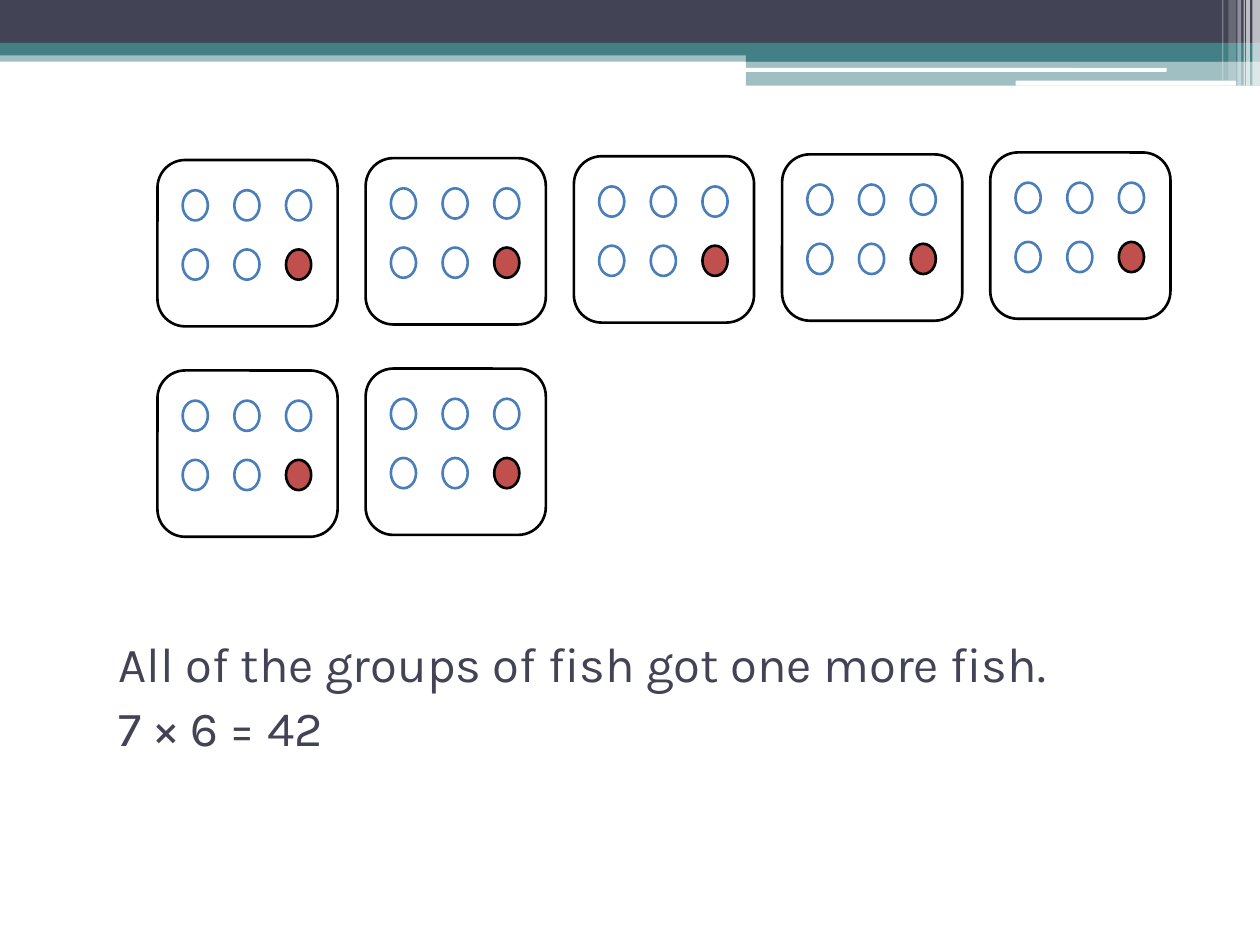
from typing import NamedTuple, Optional

from pptx import Presentation
from pptx.dml.color import RGBColor
from pptx.enum.shapes import MSO_SHAPE as Preset
from pptx.enum.text import MSO_ANCHOR as Anchor, PP_ALIGN as Align
from pptx.oxml.ns import qn
from pptx.oxml.xmlchemy import OxmlElement
from pptx.shapes.autoshape import Shape
from pptx.util import Inches, Pt

SLATE = RGBColor(0x42, 0x44, 0x56)
TEAL = RGBColor(0x43, 0x80, 0x86)
WHITE = RGBColor(0xFF, 0xFF, 0xFF)
BLACK = RGBColor(0x00, 0x00, 0x00)
BLUE = RGBColor(0x4A, 0x7E, 0xBB)
RED = RGBColor(0xC0, 0x50, 0x4D)

TANKS_PER_ROW = (5, 2)
TANK_LEFT, TANK_TOP = 1.25, 1.27
TANK_WIDTH, TANK_HEIGHT = 1.43, 1.32
TANK_STEP_X = 6.61 / 4
TANK_STEP_Y = 1.67
TANK_RISE = 0.06 / 4  # each tank sits a little higher than its left neighbour

FISH_ROWS, FISH_COLUMNS = 2, 3
FISH_OFFSET_X, FISH_OFFSET_Y = 0.2, 0.24
FISH_STEP_X, FISH_STEP_Y = 0.41, 0.47
FISH_WIDTH, FISH_HEIGHT = 0.2, 0.24


class Area(NamedTuple):
    left: float
    top: float
    width: float
    height: float


class Band(NamedTuple):
    area: Area
    color: RGBColor
    opacity: int = 100
    preset: Preset = Preset.RECTANGLE


HEADER_BANDS = (
    Band(Area(0, 0.4, 10, 0.09), TEAL, 50),
    Band(Area(0, 0, 10, 0.34), SLATE),
    Band(Area(0, 0.34, 10, 0.1), TEAL),
    Band(Area(5.92, 0.39, 4.08, 0.1), TEAL),
    Band(Area(5.92, 0.48, 4.08, 0.2), TEAL, 50),
    Band(Area(5.91, 0.54, 3.35, 0.03), WHITE, preset=Preset.ROUNDED_RECTANGLE),
    Band(Area(8.06, 0.64, 1.75, 0.04), WHITE, preset=Preset.ROUNDED_RECTANGLE),
    Band(Area(9.94, 0, 0.06, 0.68), WHITE, 65),
    Band(Area(9.89, 0, 0.03, 0.68), WHITE, 65),
    Band(Area(9.87, 0, 0.01, 0.68), WHITE, 60),
    Band(Area(9.82, 0, 0.03, 0.68), WHITE, 40),
    Band(Area(9.75, 0, 0.06, 0.64), WHITE, 20),
    Band(Area(9.7, 0, 0.01, 0.64), WHITE, 30),
)


def add_shape(shapes, preset: Preset, area: Area, fill: Optional[RGBColor] = None,
              line: Optional[RGBColor] = None) -> Shape:
    shape = shapes.add_shape(preset, *map(Inches, area))
    shape.shadow.inherit = False
    if fill is None:
        shape.fill.background()
    else:
        shape.fill.solid()
        shape.fill.fore_color.rgb = fill
    if line is None:
        shape.line.fill.background()
    else:
        shape.line.color.rgb = line
        shape.line.width = Pt(1.5)
    return shape


def add_band(shapes, band: Band) -> None:
    shape = add_shape(shapes, band.preset, band.area, fill=band.color)
    if band.opacity < 100:
        alpha = OxmlElement("a:alpha")
        alpha.set("val", str(band.opacity * 1000))
        shape.element.spPr.find(f"{qn('a:solidFill')}/{qn('a:srgbClr')}").append(alpha)


def add_tank(shapes, left: float, top: float) -> None:
    """Draw one group of fish, the last of them the newly added red one."""
    tank = shapes.add_group_shape().shapes
    add_shape(tank, Preset.ROUNDED_RECTANGLE,
              Area(left, top, TANK_WIDTH, TANK_HEIGHT), line=BLACK)
    for index in range(FISH_ROWS * FISH_COLUMNS):
        row, column = divmod(index, FISH_COLUMNS)
        is_new = index == FISH_ROWS * FISH_COLUMNS - 1
        area = Area(left + FISH_OFFSET_X + column * FISH_STEP_X,
                    top + FISH_OFFSET_Y + row * FISH_STEP_Y,
                    FISH_WIDTH, FISH_HEIGHT)
        add_shape(tank, Preset.OVAL, area, fill=RED if is_new else None,
                  line=BLACK if is_new else BLUE)


def add_text(shapes, area: Area, lines: tuple[str, ...], *, font: str, size: float,
             color: RGBColor, space_before: float, inset_left: float) -> None:
    box = shapes.add_textbox(*map(Inches, area))
    frame = box.text_frame
    frame.word_wrap = True
    frame.vertical_anchor = Anchor.TOP
    frame.margin_left = Inches(inset_left)
    for index, line in enumerate(lines):
        para = frame.add_paragraph() if index else frame.paragraphs[0]
        para.alignment = Align.LEFT
        para.space_before = Pt(space_before)
        span = para.add_run()
        span.text = line
        span.font.name = font
        span.font.size = Pt(size)
        span.font.color.rgb = color


def main() -> None:
    deck = Presentation()
    deck.slide_width, deck.slide_height = Inches(10), Inches(7.5)
    shapes = deck.slides.add_slide(deck.slide_layouts[6]).shapes

    for band in HEADER_BANDS:
        add_band(shapes, band)
    add_text(shapes, Area(0.79, 4.98, 8.5, 1.39),
             ("All of the groups of fish got one more fish.", "7 × 6 = 42"),
             font="Karla", size=28, color=SLATE, space_before=3, inset_left=0.15)
    for row, count in enumerate(TANKS_PER_ROW):
        for column in range(count):
            add_tank(shapes, TANK_LEFT + column * TANK_STEP_X,
                     TANK_TOP + row * TANK_STEP_Y - column * TANK_RISE)

    deck.save("out.pptx")


if __name__ == "__main__":
    main()
